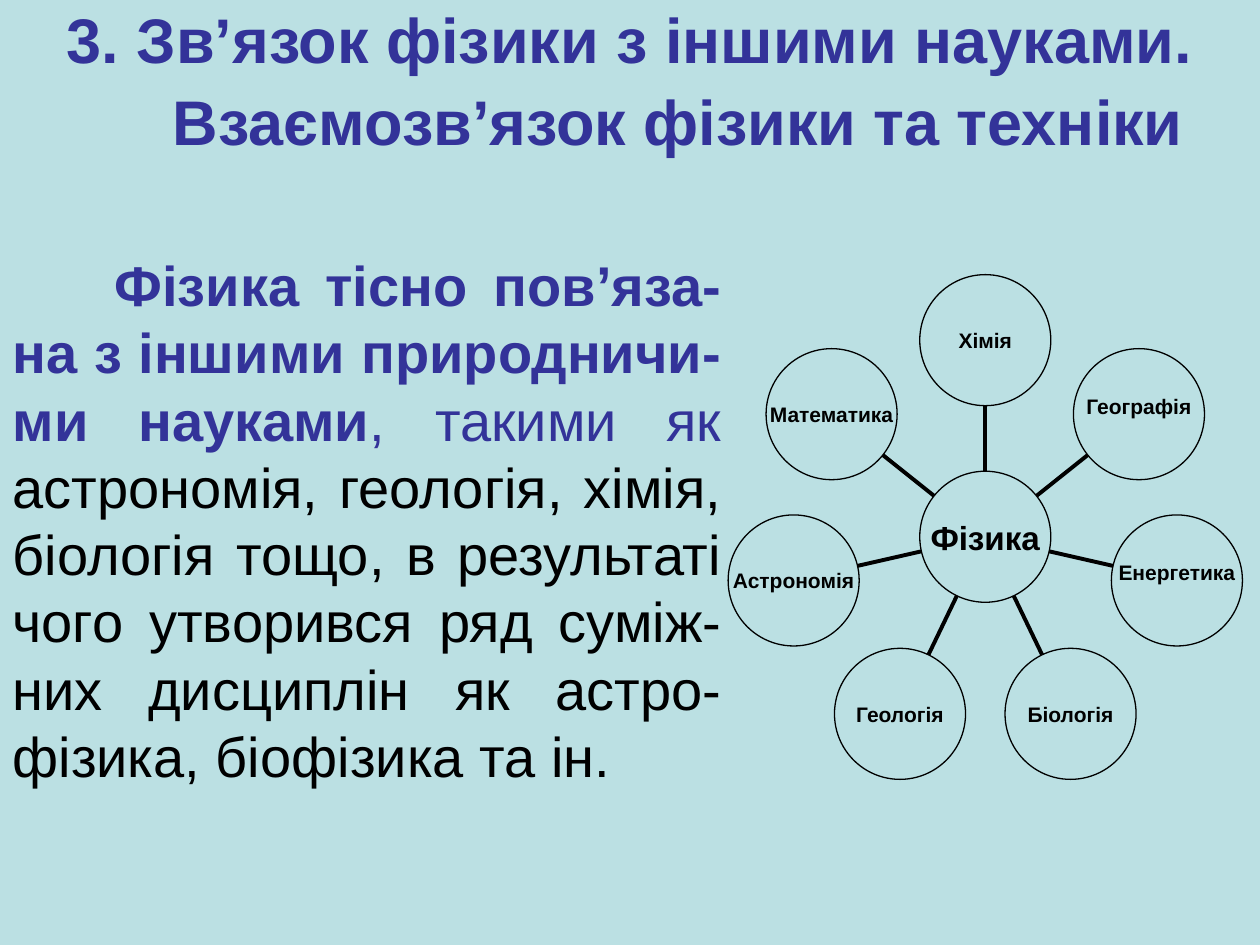
"""Build a slide on how physics connects to the other sciences."""
from dataclasses import dataclass
from math import cos, pi, sin

from lxml.etree import SubElement
from pptx import Presentation
from pptx.dml.color import RGBColor
from pptx.enum.shapes import MSO_CONNECTOR, MSO_SHAPE
from pptx.enum.text import MSO_ANCHOR, MSO_AUTO_SIZE, PP_ALIGN
from pptx.oxml.ns import qn
from pptx.shapes.shapetree import GroupShapes
from pptx.text.text import _Paragraph as Paragraph
from pptx.util import Inches, Pt

BACKGROUND = RGBColor(0xBB, 0xE0, 0xE3)
NAVY = RGBColor(0x33, 0x33, 0x99)
BLACK = RGBColor(0, 0, 0)
FONT = "Arial"

HUB_X, HUB_Y = 7.82, 4.26
ORBIT = 1.56
DIAMETER = 1.04
SPOKE_START, SPOKE_END = 0.52, 1.05


@dataclass
class Science:
    name: str
    bottom_inset: float = 0


@dataclass
class TextRun:
    text: str
    size: float
    color: RGBColor
    bold: bool


SCIENCES = [
    Science("Хімія"),
    Science("Географія", 0.13),
    Science("Енергетика", 0.13),
    Science("Біологія"),
    Science("Геологія"),
    Science("Астрономія"),
    Science("Математика"),
]

TITLE_RUNS = [
    TextRun("3. Зв’язок фізики з іншими науками. Взаємозв’язок фізики та техніки", 36, NAVY, True),
    TextRun(" ", 40, BLACK, False),
]

BODY_RUNS = [
    TextRun("Фізика тісно пов’яза-на з іншими природничи-ми науками", 32, NAVY, True),
    TextRun(", такими як", 32, NAVY, False),
    TextRun(
        " астрономія, геологія, хімія, біологія тощо, в результаті чого утворився "
        "ряд суміж-них дисциплін як астро-фізика, біофізика та ін.",
        32, BLACK, False,
    ),
]


def place(shape, left: float, top: float, width: float, height: float) -> None:
    shape.left, shape.top = Inches(left), Inches(top)
    shape.width, shape.height = Inches(width), Inches(height)


def fill_paragraph(paragraph: Paragraph, runs: list[TextRun], alignment: PP_ALIGN,
                   margin: float, indent: float) -> None:
    paragraph.alignment = alignment
    paragraph.font.name = FONT
    properties = paragraph._p.get_or_add_pPr()
    properties.set("marL", str(Inches(margin)))
    properties.set("indent", str(Inches(indent)))
    SubElement(properties, qn("a:buNone"))
    properties.append(properties.find(qn("a:defRPr")))
    for item in runs:
        run = paragraph.add_run()
        run.text = item.text
        run.font.name = FONT
        run.font.size = Pt(item.size)
        run.font.bold = item.bold
        run.font.color.rgb = item.color


def orbit_point(angle: float, radius: float) -> tuple[float, float]:
    return HUB_X + radius * sin(angle), HUB_Y - radius * cos(angle)


def draw_spoke(shapes: GroupShapes, angle: float) -> None:
    start = orbit_point(angle, SPOKE_START)
    end = orbit_point(angle, SPOKE_END)
    spoke = shapes.add_connector(MSO_CONNECTOR.STRAIGHT, *map(Inches, start + end))
    spoke.line.color.rgb = BLACK
    spoke.line.width = Pt(2.25)
    SubElement(spoke._element.spPr, qn("a:effectLst"))


def draw_circle(shapes: GroupShapes, center: tuple[float, float],
                science: Science, size: float) -> None:
    left, top = (value - DIAMETER / 2 for value in center)
    circle = shapes.add_shape(MSO_SHAPE.OVAL, *map(Inches, (left, top, DIAMETER, DIAMETER)))
    circle.shadow.inherit = False
    circle.fill.solid()
    circle.fill.fore_color.rgb = BACKGROUND
    circle.line.color.rgb = BLACK
    circle.line.width = Pt(0.75)
    frame = circle.text_frame
    frame.word_wrap = False
    frame.vertical_anchor = MSO_ANCHOR.MIDDLE
    frame.margin_left = frame.margin_right = frame.margin_top = 0
    frame.margin_bottom = Inches(science.bottom_inset)
    paragraph = frame.paragraphs[0]
    paragraph.alignment = PP_ALIGN.CENTER
    run = paragraph.add_run()
    run.text = science.name
    run.font.name = FONT
    run.font.size = Pt(size)
    run.font.bold = True
    run.font.color.rgb = BLACK


def main() -> None:
    presentation = Presentation()
    presentation.slide_width, presentation.slide_height = Inches(10), Inches(7.5)
    slide = presentation.slides.add_slide(presentation.slide_layouts[1])
    slide.background.fill.solid()
    slide.background.fill.fore_color.rgb = BACKGROUND

    title, body = slide.placeholders
    place(title, 0, 0, 10, 1.27)
    place(body, 0, 1.94, 5.83, 5.56)
    for placeholder in (title, body):
        placeholder.text_frame.auto_size = MSO_AUTO_SIZE.NONE
    fill_paragraph(title.text_frame.paragraphs[0], TITLE_RUNS, PP_ALIGN.CENTER, 0.92, -0.92)
    fill_paragraph(body.text_frame.paragraphs[0], BODY_RUNS, PP_ALIGN.JUSTIFY, 0, 0.81)

    diagram = slide.shapes.add_group_shape().shapes
    for index, science in enumerate(SCIENCES):
        angle = 2 * pi * index / len(SCIENCES)
        draw_spoke(diagram, angle)
        draw_circle(diagram, orbit_point(angle, ORBIT), science, 12)
    draw_circle(diagram, (HUB_X, HUB_Y), Science("Фізика"), 19)

    presentation.save("out.pptx")


if __name__ == "__main__":
    main()
